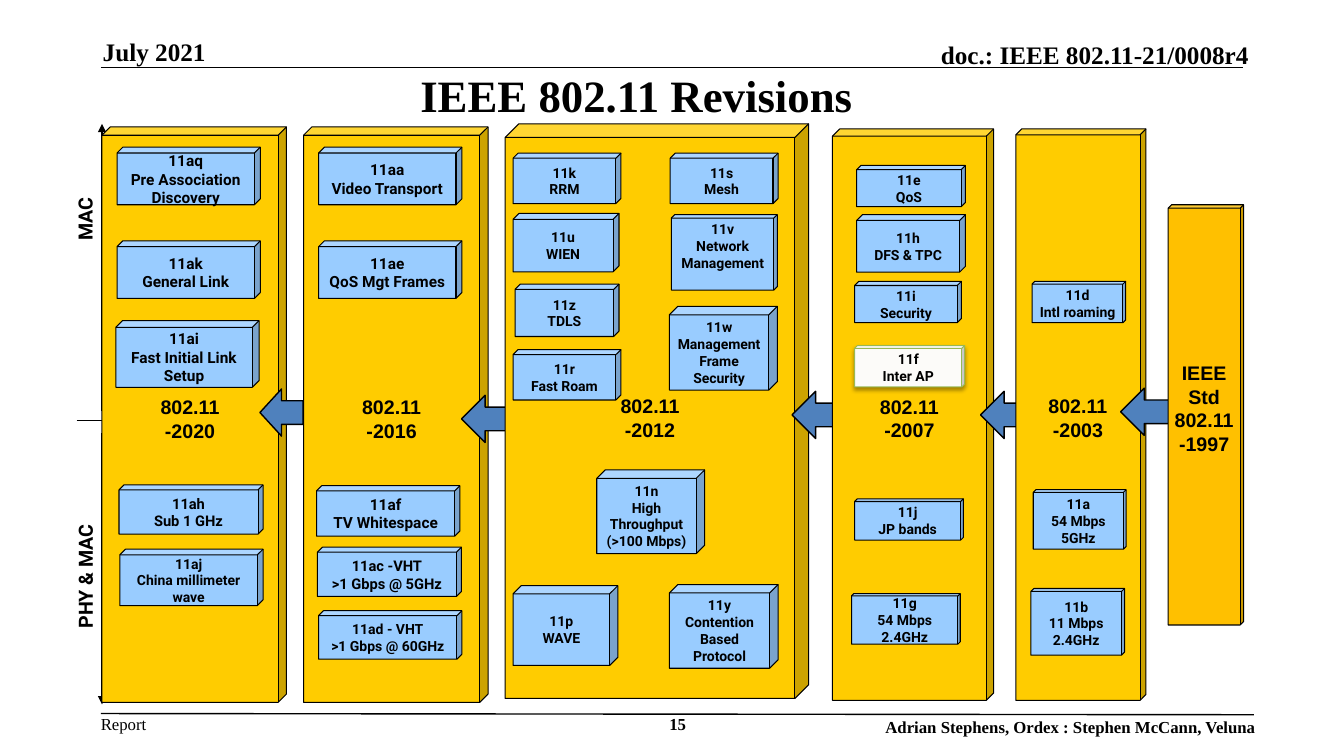
from lxml.etree import SubElement
from pptx import Presentation
from pptx.dml.color import RGBColor as Rgb
from pptx.enum.shapes import MSO_CONNECTOR as Wire, MSO_SHAPE as Form
from pptx.enum.text import MSO_ANCHOR as Anchor, PP_ALIGN as Align
from pptx.oxml.ns import qn
from pptx.util import Cm, Pt

HUES = {
    "ink": "000000",
    "gold": "FFCC00",
    "amber": "FFC000",
    "sky": "99CCFF",
    "blue": "4F81BD",
    "cream": "FCFBF9",
    "green": "98B955",
}
SERIF = "Times New Roman"
THIN, MID, DEEP = 0.045, 0.066, 0.101

COLUMNS = [
    ("802.11\n-2020", (2.57, 3.2, 4.65, 14.5), (6.55, 9.8, 1.09), [
        ("11aq\nPre Association\nDiscovery", (2.95, 3.71, 3.61, 1.45), 11, DEEP),
        ("11ak\nGeneral Link", (2.95, 6.07, 3.61, 1.45), 11, DEEP),
        ("11ai\nFast Initial Link\nSetup", (2.92, 8.08, 3.61, 1.68), 11, DEEP),
        ("11ah\nSub 1 GHz", (3.0, 12.22, 3.63, 1.24), 10.5, DEEP),
        ("11aj\nChina millimeter\nwave", (3.02, 13.84, 3.61, 1.42), 10, DEEP),
    ]),
    ("802.11\n-2016", (7.65, 3.2, 4.65, 14.5), (11.63, 9.96, 1.24), [
        ("11aa\nVideo Transport", (8.03, 3.71, 3.61, 1.45), 11, DEEP),
        ("11ae\nQoS Mgt Frames", (8.03, 6.07, 3.61, 1.45), 11, DEEP),
        ("11af\nTV Whitespace", (7.98, 12.24, 3.61, 1.27), 11, DEEP),
        ("11ac -VHT\n>1 Gbps @ 5GHz", (8.0, 13.79, 3.63, 1.24), 10.5, DEEP),
        ("11ad - VHT\n>1 Gbps @ 60GHz", (8.03, 15.39, 3.61, 1.22), 10, DEEP),
    ]),
    ("802.11\n-2012", (12.73, 3.12, 7.65, 14.48), (19.96, 9.86, 1.24), [
        ("11k\nRRM", (12.93, 3.86, 2.72, 1.27), 10, DEEP),
        ("11u\nWIEN", (12.93, 5.38, 2.67, 1.47), 10, DEEP),
        ("11z\nTDLS", (12.98, 7.16, 2.62, 1.32), 10, DEEP),
        ("11r\nFast Roam", (12.93, 8.81, 2.72, 1.27), 10, DEEP),
        ("11s\nMesh", (16.89, 3.86, 2.72, 1.27), 10, DEEP),
        ("11v\nNetwork\nManagement", (16.92, 5.41, 2.67, 1.9), 10, THIN),
        ("11w\nManagement\nFrame\nSecurity", (16.87, 7.72, 2.72, 2.11), 10, DEEP),
        ("11n\nHigh\nThroughput\n(>100 Mbps)", (15.04, 11.84, 2.72, 2.11), 10, DEEP),
        ("11p\nWAVE", (12.93, 14.76, 2.64, 2.01), 10, DEEP),
        ("11y\nContention\nBased\nProtocol", (16.87, 14.73, 2.74, 2.11), 10, DEEP),
    ]),
    ("802.11\n-2007", (20.98, 3.25, 4.06, 14.4), (24.71, 9.86, 1.24), [
        ("11e\nQoS", (21.59, 4.17, 2.74, 1.04), 10, DEEP),
        ("11h\nDFS & TPC", (21.59, 5.41, 2.74, 1.45), 10, DEEP),
        ("11i\nSecurity", (21.54, 7.09, 2.69, 1.04), 10, DEEP),
        ("11f\nInter AP", (21.54, 8.71, 2.77, 1.04), 10, MID),
        ("11j\nJP bands", (21.54, 12.57, 2.74, 1.04), 10, MID),
        ("11g\n54 Mbps\n2.4GHz", (21.46, 14.96, 2.74, 1.27), 10, THIN),
    ]),
    ("802.11\n-2003", (25.6, 3.25, 3.28, 14.4), (28.24, 9.78, 1.24), [
        ("11d\nIntl roaming", (26.01, 7.09, 2.36, 1.04), 10, MID),
        ("11a\n54 Mbps\n5GHz", (26.04, 12.34, 2.34, 1.5), 10, THIN),
        ("11b\n11 Mbps\n2.4GHz", (25.98, 14.83, 2.36, 1.68), 10, THIN),
    ]),
]


def tint(name):
    return Rgb.from_string(HUES[name])


def write(frame, text, size, face, bold=True, align=Align.CENTER):
    frame.text = text
    for para in frame.paragraphs:
        para.alignment = align
        for run in para.runs:
            font = run.font
            font.size, font.name, font.bold = Pt(size), face, bold
            font.color.rgb = tint("ink")


def paint(shape, fill, line="ink", width=0.75):
    shape.shadow.inherit = False
    shape.fill.solid()
    shape.fill.fore_color.rgb = tint(fill)
    shape.line.color.rgb = tint(line)
    shape.line.width = Pt(width)


def add_cube(shapes, text, box, size, depth, face="Roboto", fill="sky"):
    cube = shapes.add_shape(Form.CUBE, *map(Cm, box))
    cube.adjustments[0] = depth
    paint(cube, fill)
    frame = cube.text_frame
    frame.word_wrap = False
    frame.vertical_anchor = Anchor.MIDDLE
    write(frame, text, size, face)
    return cube


def add_glow(cube):
    paint(cube, "cream", "green")
    effects = cube._element.spPr.find(qn("a:effectLst"))
    shade = SubElement(effects, qn("a:outerShdw"), blurRad="39400",
                       dist="22900", dir="5400000", rotWithShape="0")
    color = SubElement(shade, qn("a:srgbClr"), val=HUES["ink"])
    SubElement(color, qn("a:alpha"), val="35000")


def add_arrow(shapes, x, y, w):
    arrow = shapes.add_shape(Form.RIGHT_ARROW, Cm(x), Cm(y), Cm(w), Cm(1.19))
    arrow.rotation = 180
    paint(arrow, "blue", width=1)


def add_column(slide, title, box, arrow, parts):
    group = slide.shapes.add_group_shape().shapes
    add_cube(group, title, box, 14, THIN, "Arial", "gold")
    for text, place, size, depth in parts:
        cube = add_cube(group, text, place, size, depth)
        if text.startswith("11f"):
            add_glow(cube)
        if text.startswith("11v"):
            cube.text_frame.margin_bottom = Cm(0.54)
    add_arrow(slide.shapes, *arrow)


def add_line(slide, x1, y1, x2, y2, head=False):
    line = slide.shapes.add_connector(Wire.STRAIGHT, *map(Cm, (x1, y1, x2, y2)))
    line.line.color.rgb = tint("ink")
    line.line.width = Pt(1)
    if head:
        SubElement(line.line._get_or_add_ln(), qn("a:tailEnd"), type="triangle")
    SubElement(line._element.spPr, qn("a:effectLst"))


def add_text(slide, text, box, size, align, anchor=Anchor.TOP, bold=True):
    frame = slide.shapes.add_textbox(*map(Cm, box)).text_frame
    frame.word_wrap = True
    frame.vertical_anchor = anchor
    frame.margin_left = frame.margin_right = 0
    frame.margin_top = frame.margin_bottom = 0
    write(frame, text, size, SERIF, bold, align)


def add_side(slide, text, box):
    label = slide.shapes.add_textbox(*map(Cm, box))
    label.rotation = 270
    label.text_frame.word_wrap = False
    write(label.text_frame, text, 14, "Roboto", align=Align.LEFT)


def main():
    deck = Presentation()
    deck.slide_width, deck.slide_height = Cm(33.87), Cm(19.05)
    slide = deck.slides.add_slide(deck.slide_layouts[6])

    add_line(slide, 2.54, 1.7, 31.32, 1.7)
    add_line(slide, 2.54, 17.98, 31.6, 18.01)
    add_text(slide, "July 2021", (2.59, 0.91, 6.93, 0.76), 18, Align.LEFT, Anchor.BOTTOM)
    add_text(slide, "doc.: IEEE 802.11-21/0008r4", (18.52, 0.99, 12.95, 0.76), 18,
             Align.RIGHT, Anchor.BOTTOM)
    add_text(slide, "IEEE 802.11 Revisions", (9.5, 1.75, 13.08, 1.27), 32,
             Align.CENTER, Anchor.MIDDLE)

    add_side(slide, "MAC", (1.32, 5.08, 1.63, 0.84))
    add_side(slide, "PHY & MAC", (0.46, 13.97, 3.38, 0.86))
    add_line(slide, 2.57, 10.36, 2.57, 3.12, head=True)
    add_line(slide, 2.57, 10.92, 2.57, 17.75, head=True)
    add_line(slide, 1.93, 10.59, 2.57, 10.59)

    for column in COLUMNS:
        add_column(slide, *column)
    base = add_cube(slide.shapes, "IEEE\nStd\n802.11\n-1997", (29.44, 5.16, 1.9, 10.59),
                    14, THIN, "Arial", "amber")
    base.text_frame.margin_bottom = Cm(0.54)

    add_text(slide, "Report", (2.54, 17.98, 3, 0.51), 12, Align.LEFT, bold=False)
    add_text(slide, "15", (16.1, 17.98, 1.96, 1.02), 12, Align.CENTER)
    add_text(slide, "Adrian Stephens, Ordex : Stephen McCann, Veluna",
             (22.3, 18.06, 9.35, 0.69), 12, Align.RIGHT)
    deck.save("out.pptx")


if __name__ == "__main__":
    main()
